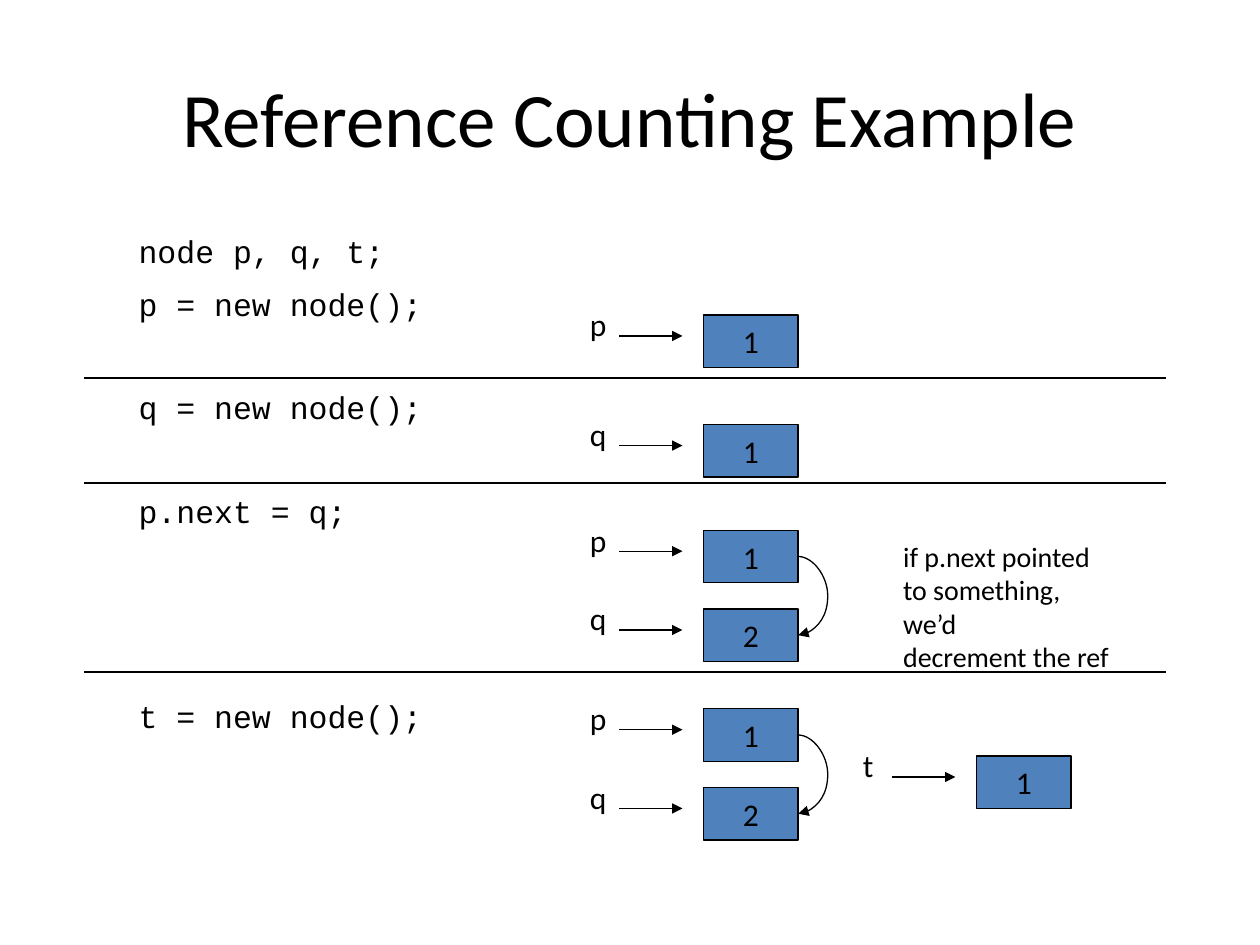
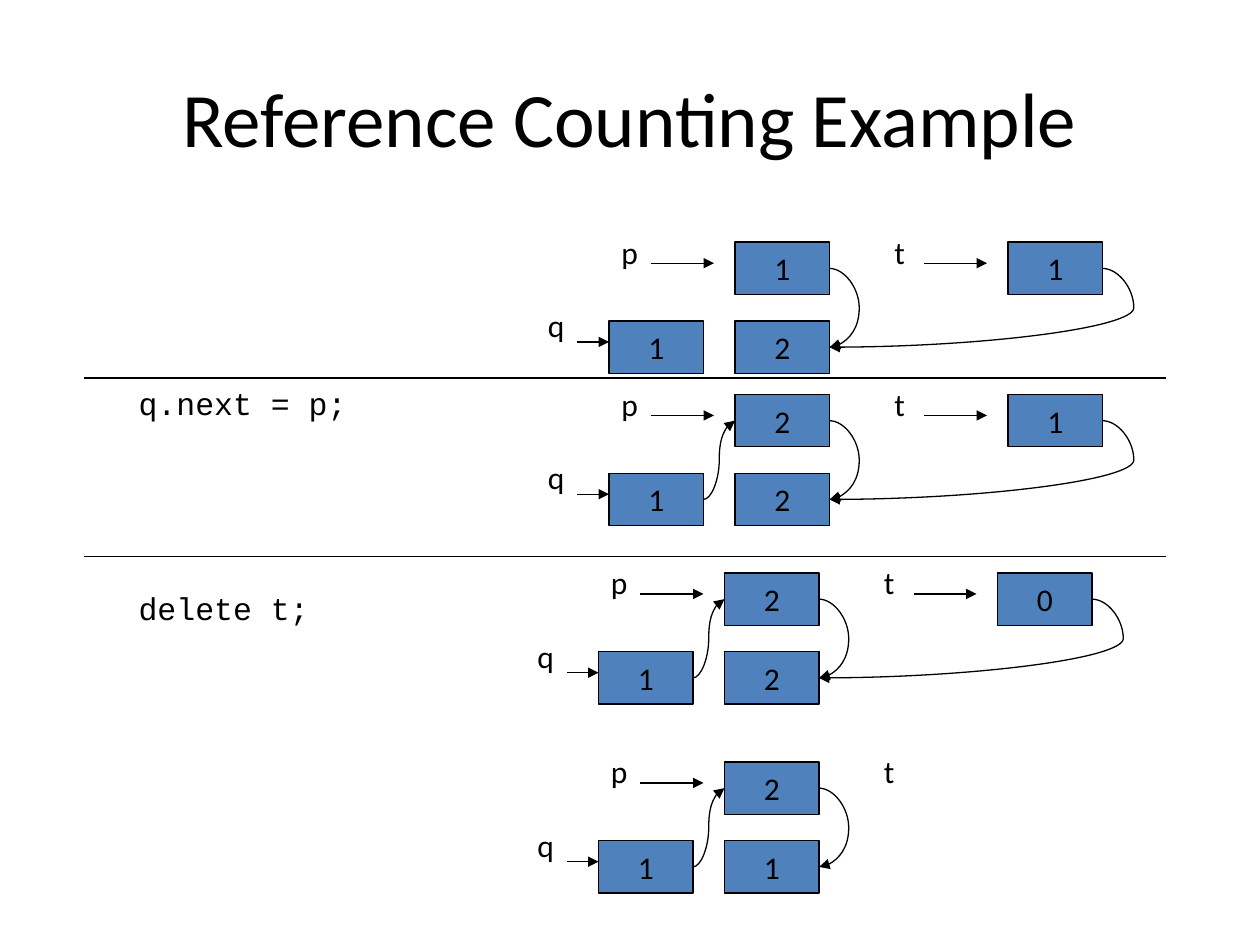
from dataclasses import dataclass
from typing import Optional

from lxml import etree
from pptx import Presentation
from pptx.dml.color import RGBColor
from pptx.enum.shapes import MSO_CONNECTOR, MSO_SHAPE
from pptx.enum.text import MSO_ANCHOR, PP_ALIGN
from pptx.oxml.ns import qn
from pptx.util import Pt

STRAIGHT, CURVE = MSO_CONNECTOR.STRAIGHT, MSO_CONNECTOR.CURVE
RECT = MSO_SHAPE.RECTANGLE
LEFT, CENTER = PP_ALIGN.LEFT, PP_ALIGN.CENTER
TOP, MIDDLE = MSO_ANCHOR.TOP, MSO_ANCHOR.MIDDLE

COLORS = {"ink": "000000", "node": "4F81BD"}
TITLE = "Reference Counting Example"
TITLE_ONLY = 5

BOX_W, BOX_H = 54, 30
PAIR_STEP = 45      # from a node to the node below it
COLUMN_STEP = 72    # from a node to the node on its left
T_OFFSET = 156      # from the p node to the t node
BULGE = 18
CODE_TOP, CODE_PITCH, CODE_LINE = 132.4, 29, 20.4

TITLE_FONT = {"name": "Calibri", "size": Pt(44)}
NODE_FONT = {"name": "Calibri", "size": Pt(18)}
NOTE_FONT = {"name": "Calibri", "size": Pt(16)}
CODE_FONT = {"name": "Courier New", "size": Pt(18)}


@dataclass
class CodeLine:
    row: int
    text: str


@dataclass
class Node:
    name: str
    count: int
    x: float
    y: float


@dataclass
class Heap:
    """State of the p, q and t nodes; t is None once deleted."""
    x: float
    y: float
    p: int
    below: int
    q: int
    t: Optional[int]
    q_linked: bool = True


CODE_1 = [
    CodeLine(0, "node p, q, t;"),
    CodeLine(1, "p = new node();"),
    CodeLine(3, "q = new node();"),
    CodeLine(5, "p.next = q;"),
    CodeLine(9, "t = new node();"),
]
CODE_2 = [CodeLine(3, "q.next = p;"), CodeLine(7, "delete t;")]
RULES_1, RULES_2 = (216, 276, 384), (216, 318)

NODE_X = 402
SINGLES = [
    Node("p", 1, NODE_X, 180),
    Node("q", 1, NODE_X, 242.6),
    Node("t", 1, NODE_X + T_OFFSET, 432),
]
PAIR_TOPS = (303, 405)
NOTE = ["if p.next pointed", "to something, we’d", "decrement the ref"]

HEAPS = [
    Heap(420, 138.4, p=1, below=2, q=1, t=1, q_linked=False),
    Heap(420, 225.4, p=2, below=2, q=1, t=1),
    Heap(414, 327.4, p=2, below=2, q=1, t=0),
    Heap(414, 435.4, p=2, below=1, q=1, t=None),
]


def rgb(name: str) -> RGBColor:
    return RGBColor.from_string(COLORS[name])


def write(tf, lines: list, font: dict, align=LEFT, anchor=TOP, wrap=True) -> None:
    tf.word_wrap = wrap
    tf.vertical_anchor = anchor
    for i, line in enumerate(lines):
        p = tf.paragraphs[0] if i == 0 else tf.add_paragraph()
        p.alignment = align
        r = p.add_run()
        r.text = line
        r.font.color.rgb = rgb("ink")
        for key, value in font.items():
            setattr(r.font, key, value)


def add_text(s, x: float, y: float, w: float, h: float, lines: list, font: dict):
    sp = s.shapes.add_textbox(Pt(x), Pt(y), Pt(w), Pt(h))
    write(sp.text_frame, lines, font)
    return sp


def add_line(s, x1: float, y1: float, x2: float, y2: float, kind=STRAIGHT, head=True):
    c = s.shapes.add_connector(kind, Pt(x1), Pt(y1), Pt(x2), Pt(y2))
    c.line.color.rgb = rgb("ink")
    c.line.width = Pt(0.75)
    pr = c._element.spPr
    if head:
        etree.SubElement(pr.find(qn("a:ln")), qn("a:tailEnd"), type="triangle")
    etree.SubElement(pr, qn("a:effectLst"))
    return c


def add_curve(s, x1: float, y1: float, x2: float, y2: float, bulge: float = BULGE) -> None:
    """Curved arrow whose middle lies bulge points right of its start."""
    if x1 == x2:
        x2 += 0.12  # the bend is a share of the width, so it cannot be zero
    c = add_line(s, x1, y1, x2, y2, CURVE)
    guides = c._element.spPr.find(qn("a:prstGeom")).find(qn("a:avLst"))
    share = round(bulge / (x2 - x1) * 100000)
    etree.SubElement(guides, qn("a:gd"), name="adj1", fmla=f"val {share}")


def add_box(s, x: float, y: float, count: int) -> None:
    sp = s.shapes.add_shape(RECT, Pt(x), Pt(y), Pt(BOX_W), Pt(BOX_H))
    sp.shadow.inherit = False
    sp.fill.solid()
    sp.fill.fore_color.rgb = rgb("node")
    sp.line.color.rgb = rgb("ink")
    sp.line.width = Pt(0.75)
    write(sp.text_frame, [str(count)], NODE_FONT, CENTER, MIDDLE, wrap=False)


def add_label(s, name: str, x: float, y: float) -> None:
    add_text(s, x, y, 21 if name == "t" else 27, 36, [name], NODE_FONT)


def add_node(s, n: Node) -> None:
    add_box(s, n.x, n.y, n.count)
    add_label(s, n.name, n.x - 72, n.y - 9)
    add_line(s, n.x - 48, n.y + 12, n.x - 12, n.y + 12)


def link_down(s, x: float, y: float) -> None:
    """Arrow from the right side of a node to the node below it."""
    right, mid = x + BOX_W, y + BOX_H / 2
    add_curve(s, right, mid, right, mid + PAIR_STEP)


def add_heap(s, h: Heap) -> None:
    low, q_x, t_x = h.y + PAIR_STEP, h.x - COLUMN_STEP, h.x + T_OFFSET
    mid, low_mid = h.y + BOX_H / 2, low + BOX_H / 2
    add_node(s, Node("p", h.p, h.x, h.y))
    add_box(s, h.x, low, h.below)
    link_down(s, h.x, h.y)

    add_box(s, q_x, low, h.q)
    add_label(s, "q", q_x - 42, low - 12)
    add_line(s, q_x - 18, low + 12, q_x, low + 12)
    if h.q_linked:
        add_curve(s, q_x + BOX_W, low_mid, h.x, mid, BULGE / 2)

    if h.t is None:
        add_label(s, "t", t_x - 72, h.y - 9)
    else:
        add_node(s, Node("t", h.t, t_x, h.y))
        add_curve(s, t_x + BOX_W, mid, h.x + BOX_W, low_mid)


def add_code(s, lines: list) -> None:
    """One text block; skipped rows become space before a line."""
    first, last = lines[0].row, lines[-1].row
    sp = add_text(s, 36, CODE_TOP + first * CODE_PITCH, 648,
                  (last - first + 1) * CODE_PITCH, [l.text for l in lines], CODE_FONT)
    tf = sp.text_frame
    tf.margin_left, tf.margin_top = Pt(43.2), Pt(0)
    for p, before, line in zip(tf.paragraphs[1:], lines, lines[1:]):
        p.space_before = Pt((line.row - before.row) * CODE_PITCH - CODE_LINE)


def add_slide(prs, code: list, rules: tuple):
    s = prs.slides.add_slide(prs.slide_layouts[TITLE_ONLY])
    sp = s.shapes.title
    place = {"left": 36, "top": 21.6, "width": 648, "height": 90}
    for key, value in place.items():
        setattr(sp, key, Pt(value))
    write(sp.text_frame, [TITLE], TITLE_FONT, CENTER, MIDDLE)
    add_code(s, code)
    for y in rules:
        add_line(s, 48, y, 666, y, head=False)
    return s


def main() -> None:
    prs = Presentation()
    prs.slide_width, prs.slide_height = Pt(720), Pt(540)

    s = add_slide(prs, CODE_1, RULES_1)
    for n in SINGLES:
        add_node(s, n)
    for y in PAIR_TOPS:
        add_node(s, Node("p", 1, NODE_X, y))
        add_node(s, Node("q", 2, NODE_X, y + PAIR_STEP))
        link_down(s, NODE_X, y)
    add_text(s, 509, 304.6, 135, 65, NOTE, NOTE_FONT)

    s = add_slide(prs, CODE_2, RULES_2)
    for h in HEAPS:
        add_heap(s, h)

    prs.save("out.pptx")


if __name__ == "__main__":
    main()
